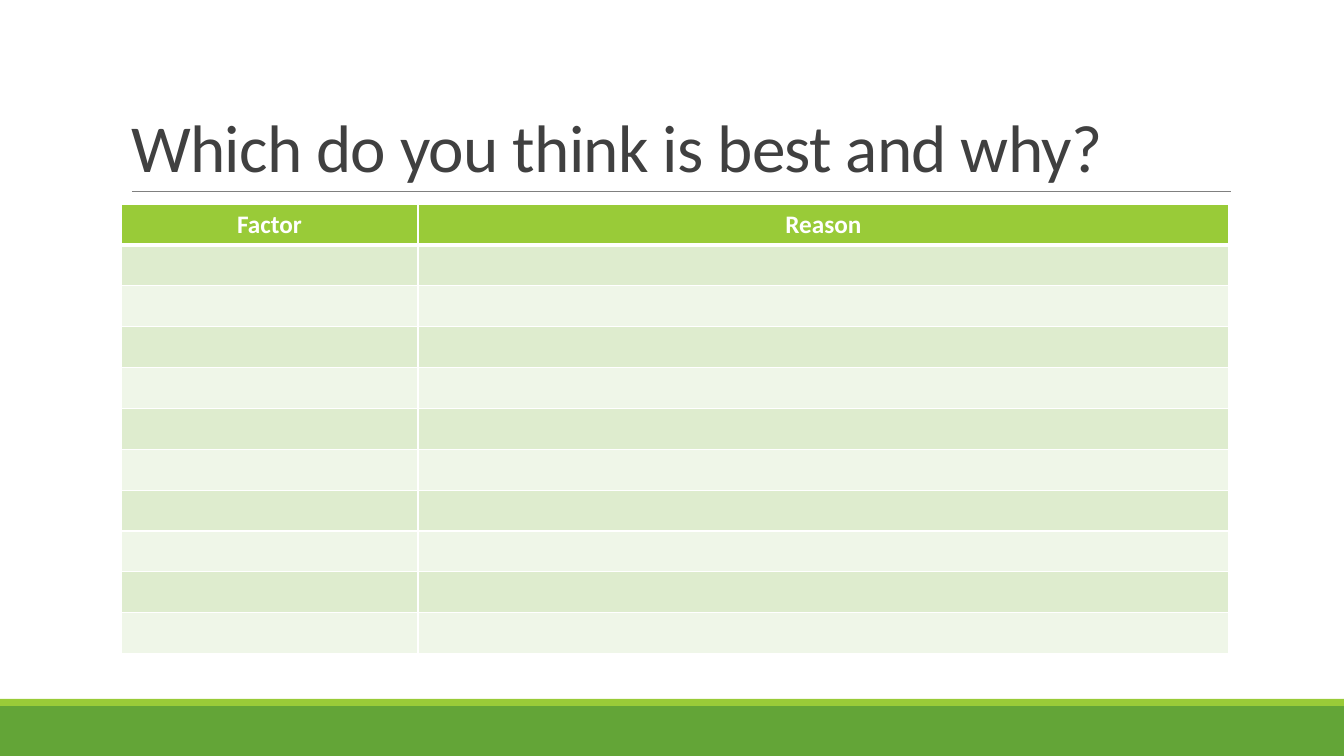
import pptx
import pptx.util
import pptx.dml.color
import pptx.enum.shapes
import pptx.enum.text
import pptx.oxml
import pptx.oxml.ns

PX = 914400 / 100.8
COLORS = {
    "white": "FFFFFF",
    "title": "404040",
    "rule": "808080",
    "lime": "99CB38",
    "green": "63A537",
    "band_dark": "DEECCE",
    "band_light": "EFF6E8",
}
FONT = "Calibri"
HEADERS = ["Factor", "Reason"]
COLUMN_SHARES = [297, 811]
BODY_ROWS = 10


def px(n):
    return pptx.util.Emu(round(n * PX))


def rgb(name):
    return pptx.dml.color.RGBColor.from_string(COLORS[name])


def write(tf, text, size, color, bold=False, align="LEFT", line_spacing=None, tracking=None):
    p = tf.paragraphs[0]
    p.alignment = getattr(pptx.enum.text.PP_ALIGN, align)
    if line_spacing:
        p.line_spacing = line_spacing
    r = p.add_run()
    r.text = text
    r.font.name = FONT
    r.font.size = pptx.util.Pt(size)
    r.font.bold = bold
    r.font.color.rgb = rgb(color)
    if tracking is not None:
        r.font._element.set("spc", str(round(tracking * 100)))


def add_bar(s, x, y, w, h, color):
    sp = s.shapes.add_shape(pptx.enum.shapes.MSO_SHAPE.RECTANGLE, px(x), px(y), px(w), px(h))
    sp.shadow.inherit = False
    sp.fill.solid()
    sp.fill.fore_color.rgb = rgb(color)
    sp.line.fill.background()


def add_footer(s, x, y, w, h):
    stripe = 7
    add_bar(s, x, y + stripe, w, h - stripe, "green")
    add_bar(s, x, y, w, stripe, "lime")


def add_title(s, x, y, w, h, text):
    sp = s.shapes.title
    sp.left, sp.top, sp.width, sp.height = px(x), px(y), px(w), px(h)
    tf = sp.text_frame
    tf.word_wrap = True
    tf.auto_size = pptx.enum.text.MSO_AUTO_SIZE.NONE
    tf.vertical_anchor = pptx.enum.text.MSO_ANCHOR.BOTTOM
    write(tf, text, 48, "title", line_spacing=0.85, tracking=-0.5)
    rule = s.shapes.add_connector(
        pptx.enum.shapes.MSO_CONNECTOR.STRAIGHT, px(x + 11), px(y + h), px(x + w + 1), px(y + h))
    rule.line.color.rgb = rgb("rule")
    rule.line.width = pptx.util.Pt(0.5)
    rule._element.spPr.append(pptx.oxml.parse_xml(
        f"<a:effectLst {pptx.oxml.ns.nsdecls('a')}/>"))


def set_borders(cell, **widths):
    tcPr = cell._tc.get_or_add_tcPr()
    for i, (side, width) in enumerate(widths.items()):
        tcPr.insert(i, pptx.oxml.parse_xml(
            f"<a:ln{side} {pptx.oxml.ns.nsdecls('a')} w='{pptx.util.Pt(width)}'>"
            f"<a:solidFill><a:srgbClr val='{COLORS['white']}'/></a:solidFill></a:ln{side}>"))


def add_reason_table(s, x, y, w, h):
    rows = BODY_ROWS + 1
    table = s.shapes.add_table(rows, len(HEADERS), px(x), px(y), px(w), px(h)).table
    for column, share in zip(table.columns, COLUMN_SHARES):
        column.width = px(w * share / sum(COLUMN_SHARES))
    for i, row in enumerate(table.rows):
        row.height = px(h / rows)
        fill = "lime" if i == 0 else ("band_light", "band_dark")[i % 2]
        for cell, header in zip(row.cells, HEADERS):
            cell.fill.solid()
            cell.fill.fore_color.rgb = rgb(fill)
            set_borders(cell, L=1, R=1, T=3 if i == 1 else 1, B=3 if i == 0 else 1)
            if i == 0:
                write(cell.text_frame, header, 18, "white", bold=True, align="CENTER")


def main():
    prs = pptx.Presentation()
    prs.slide_width, prs.slide_height = px(1344), px(756)
    s = prs.slides.add_slide(prs.slide_layouts[5])
    add_footer(s, 0, 699, 1344, 57)
    add_title(s, 121, 31, 1109, 160, "Which do you think is best and why?")
    add_reason_table(s, 121, 204, 1108, 450)
    prs.save("out.pptx")


if __name__ == "__main__":
    main()
